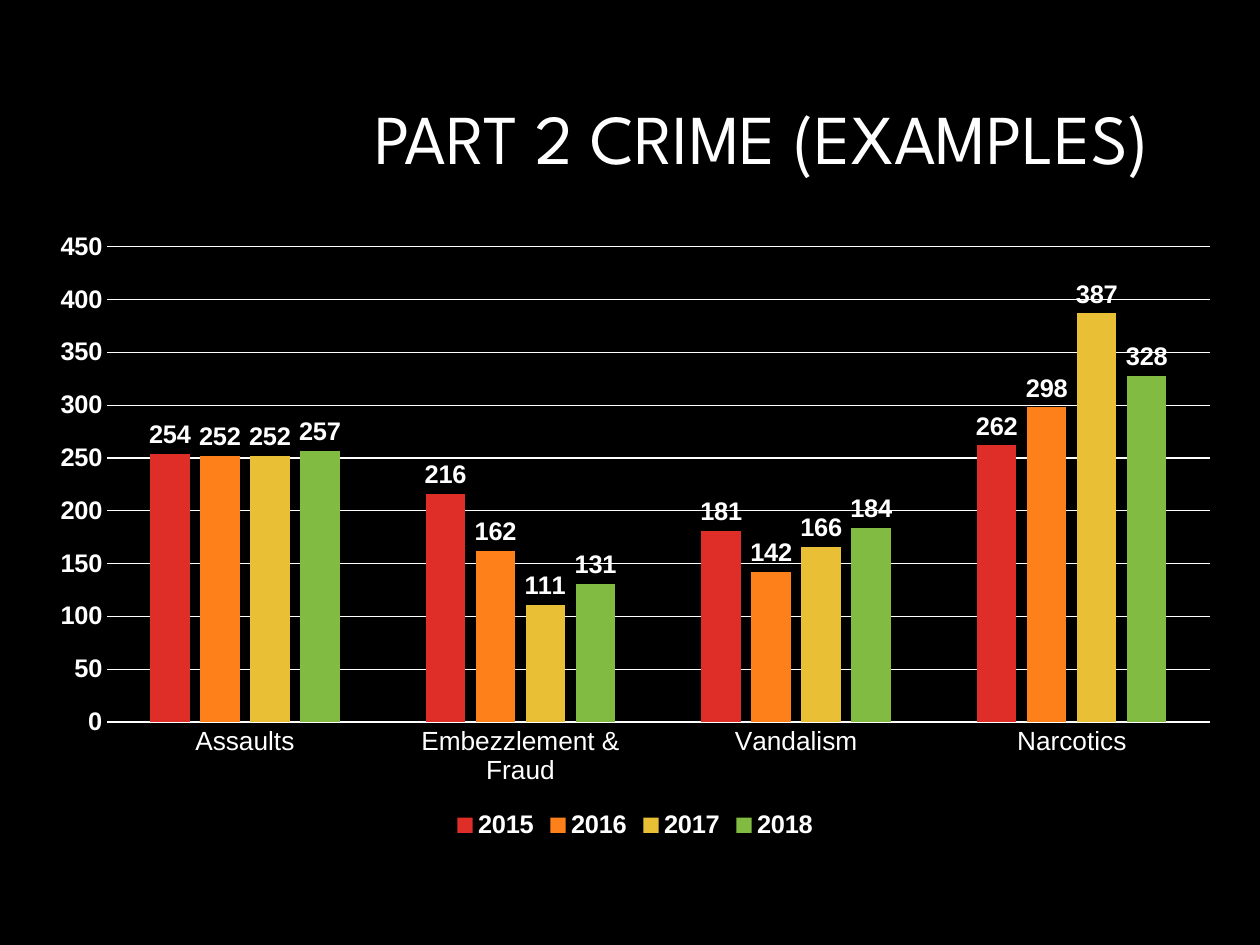
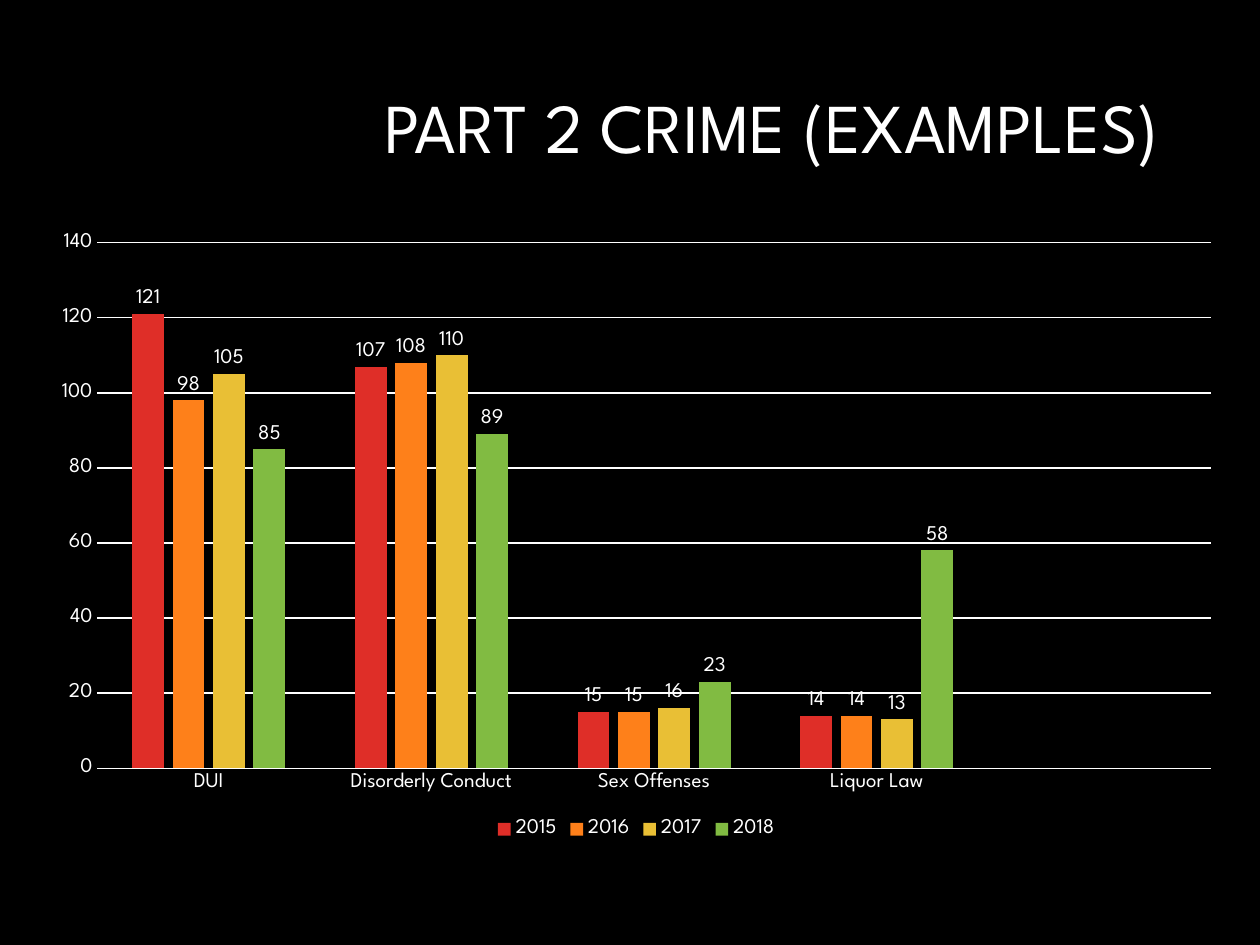
from dataclasses import dataclass

from pptx import Presentation
from pptx.chart.data import CategoryChartData
from pptx.dml.color import RGBColor
from pptx.enum.chart import XL_CHART_TYPE as ChartType
from pptx.enum.chart import XL_LABEL_POSITION as LabelPos
from pptx.enum.chart import XL_LEGEND_POSITION as LegendPos
from pptx.enum.chart import XL_TICK_MARK as Tick
from pptx.enum.text import MSO_ANCHOR, MSO_AUTO_SIZE, PP_ALIGN
from pptx.util import Inches, Pt


@dataclass(frozen=True)
class Theme:
    background: str = "000000"
    ink: str = "FFFFFF"
    bars: tuple = ("DF2E28", "FE801A", "E9BF35", "81BB42")
    title_font: str = "League Spartan"
    title_size: float = 40
    line_width: float = 0.75


@dataclass(frozen=True)
class ChartText:
    font: str
    size: float
    category_size: float
    bold: bool


THEME = Theme()
ARIAL_TEXT = ChartText("Arial", 14.5, 15, True)
SPARTAN_TEXT = ChartText("League Spartan", 12, 12, False)
YEARS = ("2015", "2016", "2017", "2018")


class Deck:
    def __init__(self, theme):
        self.theme = theme
        self.prs = Presentation()
        self.prs.slide_width = Inches(10)
        self.prs.slide_height = Inches(7.5)
        self.s = None

    def add_slide(self):
        self.s = self.prs.slides.add_slide(self.prs.slide_layouts[5])
        self.fill(self.s.background, self.theme.background)

    def fill(self, target, color):
        target.fill.solid()
        target.fill.fore_color.rgb = RGBColor.from_string(color)

    def line(self, fmt):
        fmt.line.color.rgb = RGBColor.from_string(self.theme.ink)
        fmt.line.width = Pt(self.theme.line_width)

    def style_font(self, font, name, size, bold=False):
        font.name = name
        font.size = Pt(size)
        font.bold = bold
        font.color.rgb = RGBColor.from_string(self.theme.ink)

    def title(self, text, left, top):
        sp = self.s.shapes.title
        sp.left, sp.top = Inches(left), Inches(top)
        sp.width, sp.height = Inches(6.97), Inches(1.41)
        tf = sp.text_frame
        tf.word_wrap = True
        tf.auto_size = MSO_AUTO_SIZE.NONE
        tf.vertical_anchor = MSO_ANCHOR.MIDDLE
        p = tf.paragraphs[0]
        p.alignment = PP_ALIGN.RIGHT
        p.line_spacing = 0.9
        r = p.add_run()
        r.text = text
        self.style_font(r.font, self.theme.title_font, self.theme.title_size)

    def column_chart(self, left, counts, top_value, step, text):
        data = CategoryChartData()
        data.categories = list(counts)
        for year, values in zip(YEARS, zip(*counts.values())):
            data.add_series(year, values)
        chart = self.s.shapes.add_chart(
            ChartType.COLUMN_CLUSTERED, Inches(left), Inches(1.75),
            Inches(9.5), Inches(4.95), data).chart
        body = (text.font, text.size, text.bold)
        self.style_font(chart.font, *body)
        chart.has_title = False
        chart.has_legend = True
        chart.legend.position = LegendPos.BOTTOM
        chart.legend.include_in_layout = False
        self.style_font(chart.legend.font, *body)
        self.axes(chart, top_value, step, text)

        plot = chart.plots[0]
        plot.vary_by_categories = False
        plot.gap_width = 219
        plot.overlap = -27
        for series, color in zip(plot.series, self.theme.bars):
            self.fill(series.format, color)
            labels = series.data_labels
            labels.show_value = True
            labels.position = LabelPos.OUTSIDE_END
            self.style_font(labels.font, *body)

    def axes(self, chart, top_value, step, text):
        for axis in (chart.category_axis, chart.value_axis):
            axis.major_tick_mark = axis.minor_tick_mark = Tick.NONE
        cat, val = chart.category_axis, chart.value_axis
        self.style_font(cat.tick_labels.font, text.font, text.category_size)
        self.line(cat.format)
        self.style_font(val.tick_labels.font, text.font, text.size, text.bold)
        val.format.line.fill.background()
        val.minimum_scale = 0
        val.maximum_scale = top_value
        val.major_unit = step
        val.has_major_gridlines = True
        self.line(val.major_gridlines.format)


def main():
    deck = Deck(THEME)
    heading = "PART 2 CRIME (EXAMPLES)"

    deck.add_slide()
    deck.title(heading, 2.25, 0.42)
    deck.column_chart(0.29, {
        "Assaults": (254, 252, 252, 257),
        "Embezzlement & Fraud": (216, 162, 111, 131),
        "Vandalism": (181, 142, 166, 184),
        "Narcotics": (262, 298, 387, 328),
    }, 450, 50, ARIAL_TEXT)

    deck.add_slide()
    deck.title(heading, 2.33, 0.33)
    deck.column_chart(0.3, {
        "DUI": (121, 98, 105, 85),
        "Disorderly Conduct": (107, 108, 110, 89),
        "Sex Offenses": (15, 15, 16, 23),
        "Liquor Law": (14, 14, 13, 58),
        "": (None,) * len(YEARS),
    }, 140, 20, SPARTAN_TEXT)

    deck.prs.save("out.pptx")


if __name__ == "__main__":
    main()
